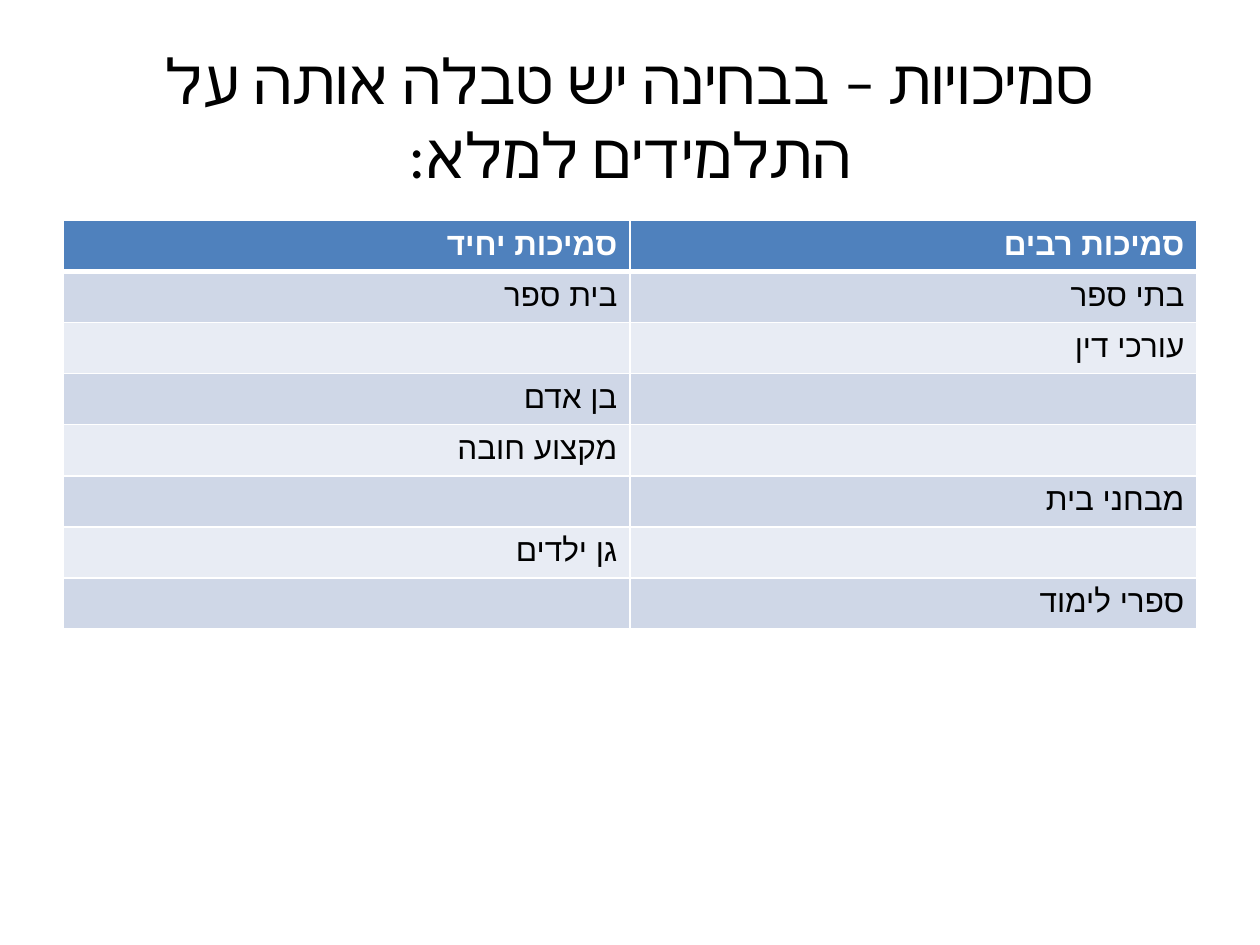
"""Build a slide with a Hebrew construct-state table for pupils to complete."""
from lxml import etree
from pptx import Presentation
from pptx.dml.color import RGBColor
from pptx.enum.text import MSO_ANCHOR, MSO_AUTO_SIZE, PP_ALIGN
from pptx.oxml.ns import qn
from pptx.util import Inches, Pt

CENTER, RIGHT = PP_ALIGN.CENTER, PP_ALIGN.RIGHT
MIDDLE, NO_FIT = MSO_ANCHOR.MIDDLE, MSO_AUTO_SIZE.NONE

TITLE = "סמיכויות – בבחינה יש טבלה אותה על התלמידים למלא:"
ROWS = [
    ("סמיכות יחיד", "סמיכות רבים"),
    ("בית ספר", "בתי ספר"),
    ("", "עורכי דין"),
    ("בן אדם", ""),
    ("מקצוע חובה", ""),
    ("", "מבחני בית"),
    ("גן ילדים", ""),
    ("", "ספרי לימוד"),
]
COLORS = {"header": "4F81BD", "odd": "CFD7E7", "even": "E8ECF4",
          "white": "FFFFFF", "black": "000000"}
TITLE_BOX = (0.5, 0.3, 9, 1.25)
TABLE_BOX = (0.5, 1.75, 9, 3.24)


def write_rtl(tf, text, align, size, font, color, bold=False):
    p = tf.paragraphs[0]
    p.alignment = align
    p._p.get_or_add_pPr().set("rtl", "1")
    if not text:
        p.font.size = Pt(size)
        return
    r = p.add_run()
    r.text = text
    r.font.size = Pt(size)
    r.font.bold = bold
    r.font.name = font
    r.font.color.rgb = RGBColor.from_string(COLORS[color])
    etree.SubElement(r._r.get_or_add_rPr(), qn("a:cs"), typeface=font)


def add_borders(cell, widths):
    tc_pr = cell._tc.get_or_add_tcPr()
    for side, width in zip("LRTB", widths):
        ln = etree.SubElement(tc_pr, qn(f"a:ln{side}"), w=str(Pt(width)))
        fill = etree.SubElement(ln, qn("a:solidFill"))
        etree.SubElement(fill, qn("a:srgbClr"), val=COLORS["white"])


def add_title(s):
    sp = s.shapes.title
    sp.left, sp.top, sp.width, sp.height = map(Inches, TITLE_BOX)
    tf = sp.text_frame
    tf.auto_size = NO_FIT
    tf.word_wrap = True
    tf.vertical_anchor = MIDDLE
    write_rtl(tf, TITLE, CENTER, 35.6, "Calibri", "black")


def add_word_table(s):
    table = s.shapes.add_table(len(ROWS), len(ROWS[0]), *map(Inches, TABLE_BOX)).table
    for i, row in enumerate(ROWS):
        header = i == 0
        fill = "header" if header else "odd" if i % 2 else "even"
        for j, text in enumerate(row):
            cell = table.cell(i, j)
            add_borders(cell, (1, 1, 3 if i == 1 else 1, 3 if header else 1))
            cell.fill.solid()
            cell.fill.fore_color.rgb = RGBColor.from_string(COLORS[fill])
            write_rtl(cell.text_frame, text, RIGHT, 18, "Arial",
                      "white" if header else "black", header)


def main():
    prs = Presentation()
    prs.slide_width, prs.slide_height = Inches(10), Inches(7.5)
    s = prs.slides.add_slide(prs.slide_layouts[5])
    add_title(s)
    add_word_table(s)
    prs.save("out.pptx")


if __name__ == "__main__":
    main()
